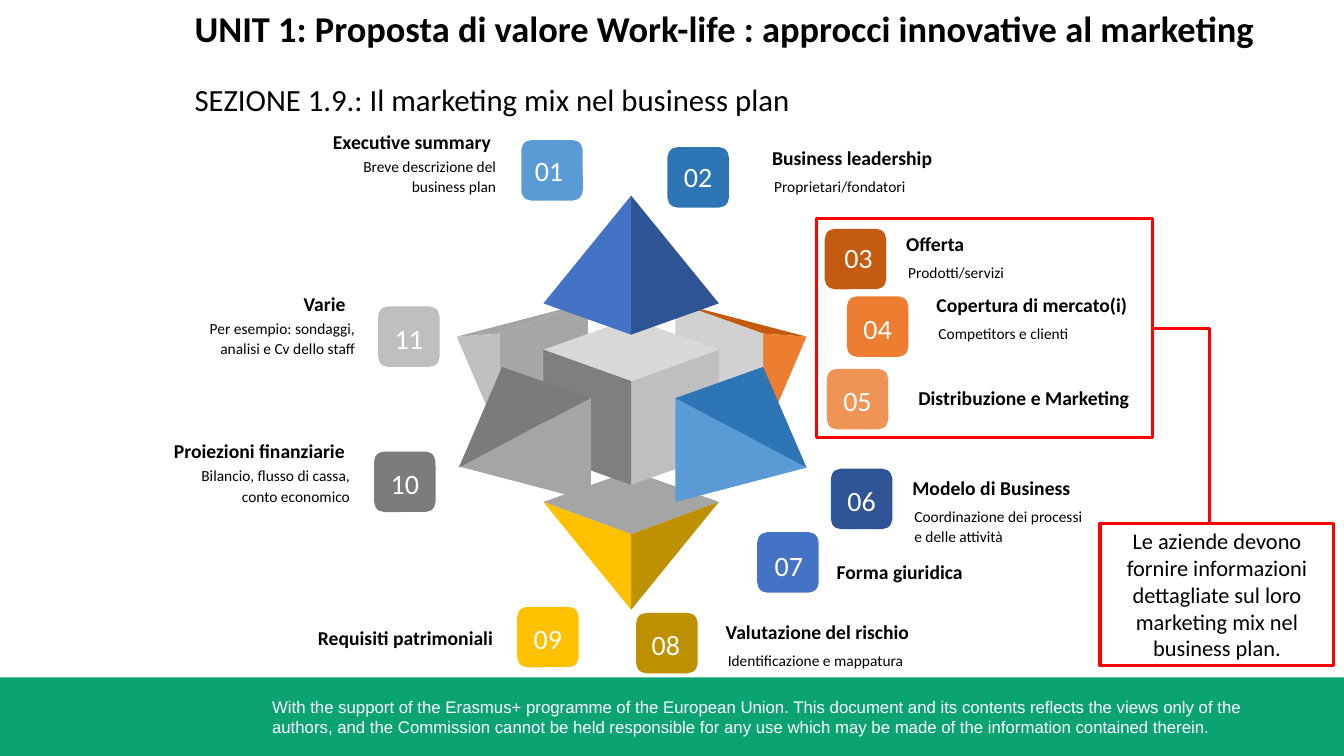
from pptx import Presentation
from pptx.dml.color import RGBColor
from pptx.enum.shapes import MSO_CONNECTOR, MSO_SHAPE
from pptx.enum.text import MSO_ANCHOR, PP_ALIGN
from pptx.oxml.ns import qn
from pptx.util import Pt
from lxml import etree

EMU_PER_PX = 9144  # 100 px to the inch
RECTANGLE, ROUNDED = MSO_SHAPE.RECTANGLE, MSO_SHAPE.ROUNDED_RECTANGLE
ELBOW = MSO_CONNECTOR.ELBOW
TOP, MIDDLE = MSO_ANCHOR.TOP, MSO_ANCHOR.MIDDLE
LEFT, CENTER, RIGHT = PP_ALIGN.LEFT, PP_ALIGN.CENTER, PP_ALIGN.RIGHT
RED, BLACK, WHITE = "FF0000", "000000", "FFFFFF"

# Faces of the exploded cube, back to front: colour and corners
FACES = [
    ("C55A11", [(800, 334), (670, 300), (757, 331)]),
    ("ED7D31", [(757, 434), (800, 334), (757, 331)]),
    ("D1D1D1", [(757, 434), (757, 331), (670, 300), (670, 403)]),
    ("A5A5A5", [(453, 334), (583, 300), (496, 331)]),
    ("BFBFBF", [(496, 434), (453, 334), (496, 331)]),
    ("A6A6A6", [(496, 434), (496, 331), (583, 300), (583, 403)]),
    ("A5A5A5", [(626, 530), (539, 498), (626, 467), (713, 498)]),
    ("BF9000", [(626, 605), (626, 530), (713, 498)]),
    ("FFC000", [(626, 605), (626, 530), (539, 498)]),
    ("BFBFBF", [(626, 378), (626, 481), (713, 450), (713, 347)]),
    ("D8D8D8", [(626, 316), (539, 347), (626, 378), (713, 347)]),
    ("7F7F7F", [(539, 347), (539, 450), (626, 481), (626, 378)]),
    ("2F5496", [(626, 194), (626, 332), (713, 301)]),
    ("4472C4", [(626, 194), (626, 332), (539, 301)]),
    ("A5A5A5", [(456, 463), (586, 497), (586, 395)]),
    ("7B7B7B", [(498, 364), (455, 464), (585, 395)]),
    ("5B9BD5", [(800, 464), (670, 498), (670, 395)]),
    ("2E75B5", [(757, 364), (800, 464), (670, 395)]),
]

# Number, colour, badge corner, offset of the number inside the badge
BADGES = [
    ("01", "5B9BD5", 517, 139, 0, 12),
    ("02", "2E75B6", 662, 146, 3, 11),
    ("03", "C55A11", 818, 227, 6, 11),
    ("04", "ED7D31", 840, 294, 3, 14),
    ("05", "F09456", 820, 366, 3, 14),
    ("06", "2F5597", 824, 465, 3, 14),
    ("07", "4472C4", 751, 528, 4, 15),
    ("08", "BF9000", 631, 608, 2, 14),
    ("09", "FFC000", 513, 602, 3, 14),
    ("10", "7C7C7C", 371, 448, 3, 14),
    ("11", "BFBFBF", 375, 304, 3, 14),
]

# Heading, detail, heading corner, alignment
LABELS = [
    ("Executive summary", "Breve descrizione del business plan", 254, 124, RIGHT),
    ("Business leadership", "Proprietari/fondatori", 756, 140, LEFT),
    ("Offerta", "Prodotti/servizi", 889, 225, LEFT),
    ("Copertura di mercato(i)", "Competitors e clienti", 919, 286, LEFT),
    ("Distribuzione e Marketing", "", 901, 378, LEFT),
    ("Modelo di Business", "Coordinazione dei processi e delle attività", 895, 467, LEFT),
    ("Forma giuridica", "", 820, 551, LEFT),
    ("Valutazione del rischio", "Identificazione e mappatura", 710, 610, LEFT),
    ("Requisiti patrimoniali", "", 256, 616, RIGHT),
    ("Proiezioni finanziarie", "Bilancio, flusso di cassa, conto economico", 109, 431, RIGHT),
    ("Varie ", "Per esempio: sondaggi, analisi e Cv dello staff", 114, 285, RIGHT),
]
# Detail box relative to its heading: dx, dy, width, height
DETAIL_BOX = {LEFT: (2, 29, 197, 67), RIGHT: (49, 25, 199, 98)}


def px(*lengths):
    return [length * EMU_PER_PX for length in lengths]


def colour(hex_string):
    return RGBColor.from_string(hex_string)


class SlideBuilder:
    font_name = "Calibri"
    line_width = Pt(2.25)

    def __init__(self, slide):
        self.slide = slide
        self.shapes = slide.shapes

    def fill_text(self, shape, text, size, color=BLACK, bold=False, align=LEFT,
                  spacing=None, insets=(10, 5, 10, 5), anchor=TOP, font=None):
        frame = shape.text_frame
        frame.text = text
        sides = ("margin_left", "margin_top", "margin_right", "margin_bottom")
        frame_format = {"word_wrap": True, "vertical_anchor": anchor,
                        **dict(zip(sides, px(*insets)))}
        paragraph = frame.paragraphs[0]
        paragraph_format = {"alignment": align, "line_spacing": spacing}
        font_format = {"name": font or self.font_name, "size": Pt(size), "bold": bold}
        for target, values in ((frame, frame_format), (paragraph, paragraph_format),
                               (paragraph.font, font_format)):
            for name, value in values.items():
                setattr(target, name, value)
        paragraph.font.color.rgb = colour(color)

    def text(self, box, text, size, **style):
        self.fill_text(self.shapes.add_textbox(*px(*box)), text, size, **style)

    def paint(self, shape, fill=None, line=None):
        shape.shadow.inherit = False
        if fill:
            shape.fill.solid()
            shape.fill.fore_color.rgb = colour(fill)
        else:
            shape.fill.background()
        if line:
            shape.line.color.rgb = colour(line)
            shape.line.width = self.line_width
        else:
            shape.line.fill.background()
        return shape

    def shape(self, kind, box, **look):
        return self.paint(self.shapes.add_shape(kind, *px(*box)), **look)

    def face(self, fill, corners):
        builder = self.shapes.build_freeform(*corners[0], scale=EMU_PER_PX)
        builder.add_line_segments(corners[1:], close=True)
        self.paint(builder.convert_to_shape(), fill=fill)

    def elbow(self, start, end, color):
        connector = self.shapes.add_connector(ELBOW, *px(*start, *end))
        connector.line.color.rgb = colour(color)
        connector.line.width = self.line_width
        properties = connector._element.spPr
        properties.find(qn("a:prstGeom")).set("prst", "bentConnector2")
        etree.SubElement(properties, qn("a:effectLst"))

    def badge(self, number, fill, left, top, dx, dy):
        self.shape(ROUNDED, (left, top, 61, 60), fill=fill)
        self.text((left + dx, top + dy, 55, 42), number, 20, color=WHITE,
                  align=CENTER, spacing=0.89, insets=(13, 5, 13, 7))

    def label(self, heading, detail, left, top, align):
        if detail:
            dx, dy, width, height = DETAIL_BOX[align]
            self.text((left + dx, top + dy, width, height), detail, 11,
                      align=align, spacing=1.1)
        self.text((left, top, 243, 34), heading, 14, bold=True, align=align)


def main():
    presentation = Presentation()
    presentation.slide_width, presentation.slide_height = px(1333, 750)
    builder = SlideBuilder(presentation.slides.add_slide(presentation.slide_layouts[6]))

    # Footer band
    builder.shape(RECTANGLE, (0, 672, 1333, 78), fill="0CA373")
    builder.text(
        (260, 686, 1042, 50),
        "With the support of the Erasmus+ programme of the European Union. "
        "This document and its contents reflects the views only of the authors, "
        "and the Commission cannot be held responsible for any use which may be "
        "made of the information contained therein.",
        12, color=WHITE, font="Arial")

    # Title and section
    builder.text((193, 5, 1130, 45),
                 "UNIT 1: Proposta di valore Work-life : approcci innovative al marketing",
                 26, bold=True, insets=(0, 1, 0, 0))
    builder.text((193, 78, 1044, 77), "SEZIONE 1.9.: Il marketing mix nel business plan",
                 22, insets=(0, 2, 0, 0))

    # Exploded cube
    for fill, corners in FACES:
        builder.face(fill, corners)

    # Numbered badges and their labels
    for badge in BADGES:
        builder.badge(*badge)
    for label in LABELS:
        builder.label(*label)

    # Highlighted marketing mix and its callout
    builder.shape(RECTANGLE, (810, 217, 333, 217), line=RED)
    builder.elbow((1143, 326), (1200, 518), RED)
    callout = builder.shape(RECTANGLE, (1091, 519, 232, 141), line=RED)
    builder.fill_text(callout, "Le aziende devono fornire informazioni dettagliate sul loro "
                      "marketing mix nel business plan.", 16, align=CENTER, anchor=MIDDLE)

    presentation.save("out.pptx")


if __name__ == "__main__":
    main()
